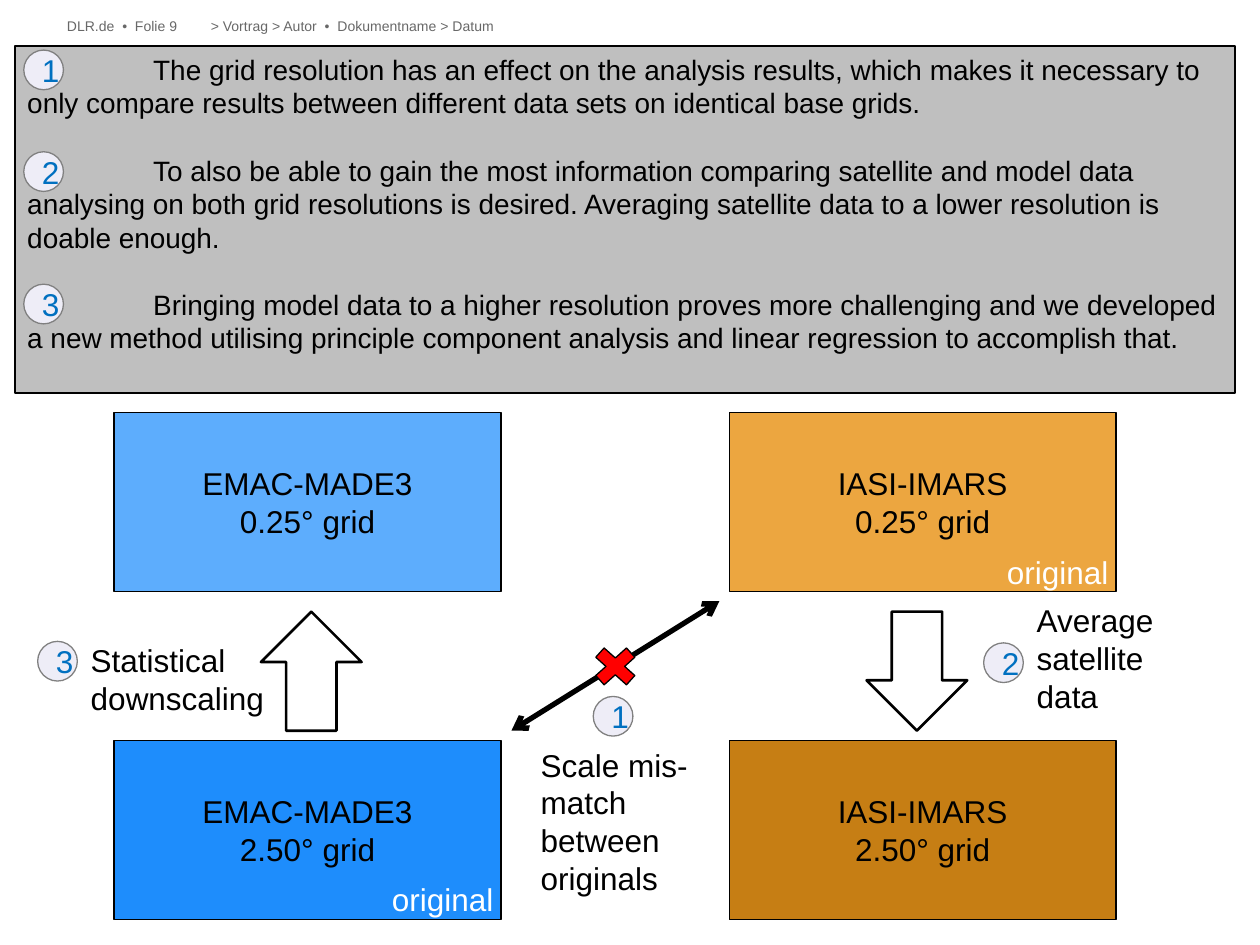
from collections import namedtuple
from dataclasses import dataclass

from lxml import etree
from pptx import Presentation
from pptx.dml.color import RGBColor
from pptx.enum.shapes import MSO_CONNECTOR, MSO_SHAPE
from pptx.enum.text import MSO_ANCHOR, PP_ALIGN
from pptx.oxml.ns import qn
from pptx.util import Cm, Pt

RECTANGLE, OVAL = MSO_SHAPE.RECTANGLE, MSO_SHAPE.OVAL
DOWN_ARROW, CROSS = MSO_SHAPE.DOWN_ARROW, MSO_SHAPE.MATH_MULTIPLY
STRAIGHT = MSO_CONNECTOR.STRAIGHT
LEFT, CENTER = PP_ALIGN.LEFT, PP_ALIGN.CENTER
TOP, MIDDLE = MSO_ANCHOR.TOP, MSO_ANCHOR.MIDDLE

Box = namedtuple("Box", "left top width height")  # centimetres


@dataclass(frozen=True)
class Theme:
    font: str = "Arial"
    black: str = "000000"
    white: str = "FFFFFF"
    header: str = "686868"
    panel: str = "BFBFBF"
    badge_fill: str = "EEEDF7"
    badge_line: str = "808080"
    badge_text: str = "0070C0"
    model_fine: str = "5DADFD"
    model_coarse: str = "1E8DFC"
    satellite_fine: str = "ECA640"
    satellite_coarse: str = "C67E14"
    cross: str = "FF0000"
    header_size: float = 8
    panel_size: float = 16
    label_size: float = 18


THEME = Theme()
BADGE_SIZE = 0.8

STATEMENTS = [
    "The grid resolution has an effect on the analysis results, which makes it "
    "necessary to only compare results between different data sets on identical "
    "base grids.",
    "To also be able to gain the most information comparing satellite and model "
    "data analysing on both grid resolutions is desired. Averaging satellite data "
    "to a lower resolution is doable enough.",
    "Bringing model data to a higher resolution proves more challenging and we "
    "developed a new method utilising principle component analysis and linear "
    "regression to accomplish that.",
]


def to_lengths(box):
    return [Cm(value) for value in box]


def write_text(text_frame, text, size, color, align=LEFT, anchor=TOP, gap=0):
    """Fill the frame, one paragraph a line, with gap points between paragraphs."""
    text_frame.text = text
    text_frame.word_wrap = True
    text_frame.vertical_anchor = anchor
    for index, paragraph in enumerate(text_frame.paragraphs):
        paragraph.alignment = align
        if index:
            paragraph.space_before = Pt(gap)
        for run in paragraph.runs:
            run.font.name = THEME.font
            run.font.size = Pt(size)
            run.font.color.rgb = RGBColor.from_string(color)


def add_tab_stop(paragraph, position):
    properties = paragraph._p.get_or_add_pPr()
    tab_list = etree.SubElement(properties, qn("a:tabLst"))
    etree.SubElement(tab_list, qn("a:tab"), pos=str(Cm(position)), algn="l")


def add_figure(slide, kind, box, fill=None, line=THEME.black, line_width=0.75):
    shape = slide.shapes.add_shape(kind, *to_lengths(box))
    shape.shadow.inherit = False
    if fill:
        shape.fill.solid()
        shape.fill.fore_color.rgb = RGBColor.from_string(fill)
    else:
        shape.fill.background()
    shape.line.color.rgb = RGBColor.from_string(line)
    shape.line.width = Pt(line_width)
    return shape


def add_label(slide, box, text, size=THEME.label_size, color=THEME.black, wrap=True):
    text_frame = slide.shapes.add_textbox(*to_lengths(box)).text_frame
    text_frame.margin_left = text_frame.margin_right = 0
    text_frame.margin_top = text_frame.margin_bottom = 0
    write_text(text_frame, text, size, color)
    text_frame.word_wrap = wrap


def add_badge(slide, left, top, number):
    badge = add_figure(slide, OVAL, Box(left, top, BADGE_SIZE, BADGE_SIZE),
                       THEME.badge_fill, THEME.badge_line)
    write_text(badge.text_frame, str(number), THEME.label_size,
               THEME.badge_text, CENTER, MIDDLE)


def add_header(slide, box):
    page_width = 2.9
    add_label(slide, box._replace(width=page_width), "DLR.de  •  Folie 9",
              THEME.header_size, THEME.header)
    add_label(slide, box._replace(left=box.left + page_width,
                                  width=box.width - page_width),
              "> Vortrag > Autor  •  Dokumentname > Datum",
              THEME.header_size, THEME.header)


def add_summary(slide, box):
    panel = add_figure(slide, RECTANGLE, box, THEME.panel, line_width=1)
    text = "\n".join("\t" + statement for statement in STATEMENTS)
    write_text(panel.text_frame, text, THEME.panel_size, THEME.black, gap=19.2)
    for paragraph in panel.text_frame.paragraphs:
        add_tab_stop(paragraph, 2.54)
    for number, offset in enumerate((0.08, 2.13, 4.8), start=1):
        add_badge(slide, box.left + 0.18, box.top + offset, number)


def add_data_set(slide, box, name, grid, fill, is_original):
    shape = add_figure(slide, RECTANGLE, box, fill)
    write_text(shape.text_frame, f"{name}\n{grid} grid", THEME.label_size,
               THEME.black, CENTER, MIDDLE)
    if is_original:
        add_label(slide, Box(box.left + 5.6, box.top + 2.82, 2.06, 0.76),
                  "original", color=THEME.white, wrap=False)


def add_data_grid(slide, box):
    """Place model and satellite data in columns, fine above coarse grid."""
    width, height = 7.8, 3.61
    left, right = box.left, box.left + box.width - width
    top, bottom = box.top, box.top + box.height - height
    for x, y, name, grid, fill, is_original in (
        (left, top, "EMAC-MADE3", "0.25°", THEME.model_fine, False),
        (right, top, "IASI-IMARS", "0.25°", THEME.satellite_fine, True),
        (left, bottom, "EMAC-MADE3", "2.50°", THEME.model_coarse, True),
        (right, bottom, "IASI-IMARS", "2.50°", THEME.satellite_coarse, False),
    ):
        add_data_set(slide, Box(x, y, width, height), name, grid, fill, is_original)


def add_downscaling(slide, box):
    arrow = add_figure(slide, DOWN_ARROW,
                       Box(box.left + 4.5, box.top, 2.03, box.height), line_width=1.5)
    arrow.rotation = 180
    add_badge(slide, box.left, box.top + 0.6, 3)
    add_label(slide, Box(box.left + 1.07, box.top + 0.6, 3.68, 1.55),
              "Statistical downscaling")


def add_averaging(slide, box):
    add_figure(slide, DOWN_ARROW, Box(box.left, box.top, 2.03, box.height),
               line_width=1.5)
    add_badge(slide, box.left + 2.36, box.top + 0.63, 2)
    add_label(slide, Box(box.left + 3.43, box.top - 0.21, 3.4, 2.31),
              "Average satellite data")


def add_mismatch(slide, box):
    """Cross out the double arrow that joins the two original data sets."""
    connector = slide.shapes.add_connector(
        STRAIGHT, Cm(box.left), Cm(box.top + 2.61),
        Cm(box.left + box.width), Cm(box.top))
    connector.line.color.rgb = RGBColor.from_string(THEME.black)
    connector.line.width = Pt(3)
    line = connector.line._get_or_add_ln()
    for end in ("a:headEnd", "a:tailEnd"):
        etree.SubElement(line, qn(end), type="arrow")
    etree.SubElement(connector._element.spPr, qn("a:effectLst"))
    add_figure(slide, CROSS, Box(box.left + 1.5, box.top + 0.78, 1.19, 1.07),
               THEME.cross)
    add_badge(slide, box.left + 1.65, box.top + 1.92, 1)
    add_label(slide, Box(box.left + 0.59, box.top + 2.91, box.width, 3.07),
              "Scale mis-match between originals")


def main():
    presentation = Presentation()
    presentation.slide_width, presentation.slide_height = Cm(25.4), Cm(19.05)
    slide = presentation.slides.add_slide(presentation.slide_layouts[6])
    add_header(slide, Box(1.35, 0.35, 22.7, 0.41))
    add_data_grid(slide, Box(2.3, 8.32, 20.2, 10.22))
    add_downscaling(slide, Box(0.76, 12.33, 6.53, 2.4))
    add_averaging(slide, Box(17.47, 12.33, 6.83, 2.4))
    add_mismatch(slide, Box(10.31, 12.12, 4.19, 5.99))
    add_summary(slide, Box(0.3, 0.93, 24.6, 7))
    presentation.save("out.pptx")


if __name__ == "__main__":
    main()
